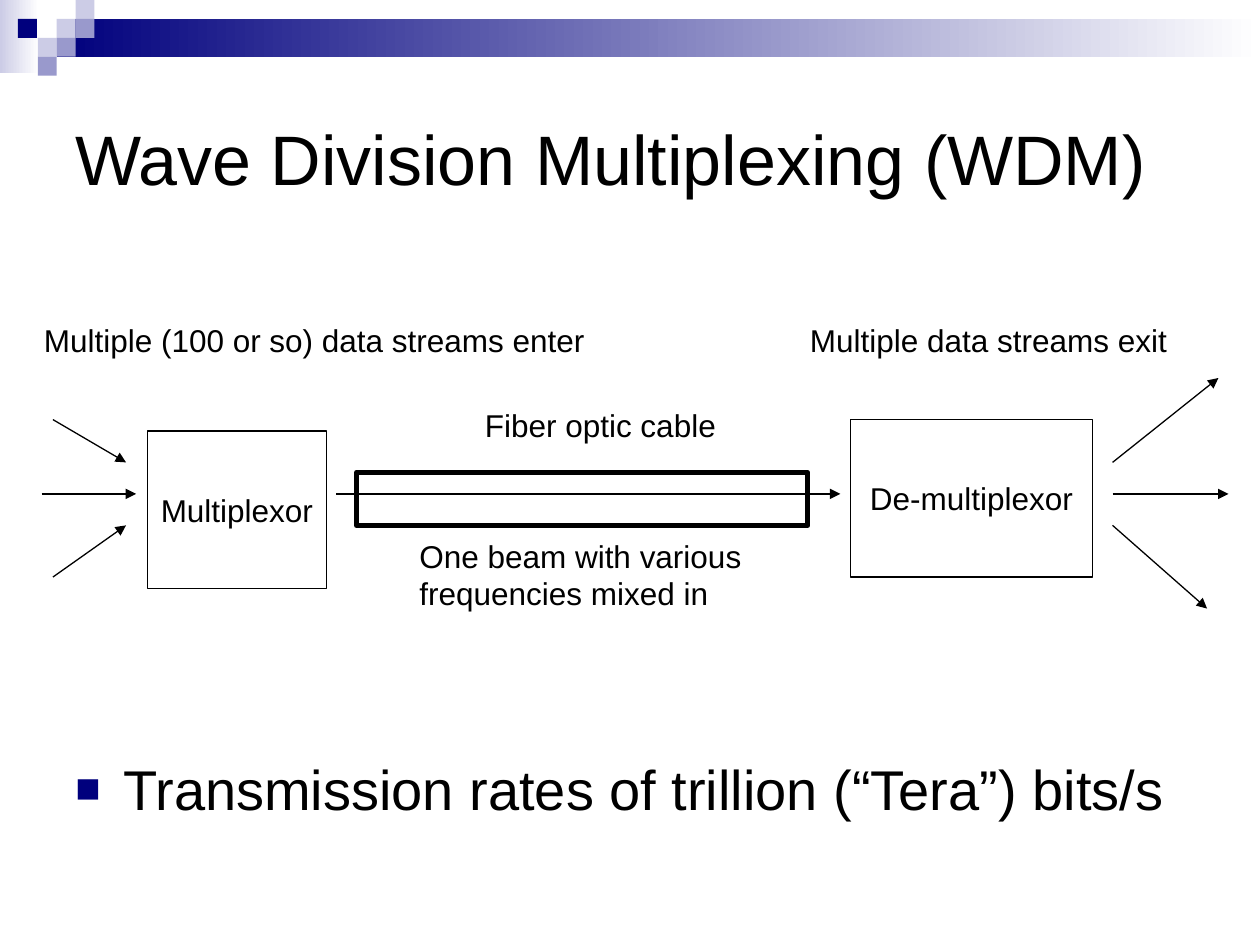
import pptx
import pptx.util
import pptx.dml.color
import pptx.enum.shapes
import pptx.enum.text
from dataclasses import dataclass
from lxml import etree

Inches = pptx.util.Inches
Shape = pptx.enum.shapes.MSO_SHAPE
Anchor = pptx.enum.text.MSO_ANCHOR
Align = pptx.enum.text.PP_ALIGN
Fit = pptx.enum.text.MSO_AUTO_SIZE


@dataclass(frozen=True)
class Theme:
    font: str = "Arial"
    ink: str = "000000"
    paper: str = "FFFFFF"
    navy: str = "00007D"
    mid: str = "9999CC"
    pale: str = "CCCCE6"
    title: int = 40
    body: int = 32
    label: int = 18
    thin: float = 0.75
    thick: float = 3


theme = Theme()


def color(code):
    return pptx.dml.color.RGBColor.from_string(code)


def add_child(node, tag, **attrs):
    return etree.SubElement(node, pptx.oxml.ns.qn(tag), attrs)


def add_rect(slide, left, top, width, height, fill=None, line=None):
    rect = slide.shapes.add_shape(
        Shape.RECTANGLE, Inches(left), Inches(top), Inches(width), Inches(height))
    rect.shadow.inherit = False
    if fill is None:
        rect.fill.background()
    elif isinstance(fill, tuple):
        rect.fill.gradient()
        rect.fill.gradient_angle = 0
        for stop, code, place in zip(rect.fill.gradient_stops, fill, (0, 1)):
            stop.color.rgb = color(code)
            stop.position = place
    else:
        rect.fill.solid()
        rect.fill.fore_color.rgb = color(fill)
    if line is None:
        rect.line.fill.background()
    else:
        rect.line.color.rgb = color(theme.ink)
        rect.line.width = pptx.util.Pt(line)
    return rect


def set_text(shape, text, size, wrap=True, anchor=Anchor.TOP, align=Align.LEFT):
    frame = shape.text_frame
    frame.text = text
    frame.word_wrap = wrap
    frame.vertical_anchor = anchor
    para = frame.paragraphs[0]
    para.alignment = align
    font = para.runs[0].font
    font.name = theme.font
    font.size = pptx.util.Pt(size)
    font.color.rgb = color(theme.ink)
    return frame


def add_text(slide, box, text, size, **style):
    shape = slide.shapes.add_textbox(*map(Inches, box))
    return set_text(shape, text, size, **style)


def add_label(slide, box, text, wrap=False):
    frame = add_text(slide, box, text, theme.label, wrap=wrap)
    frame.auto_size = Fit.SHAPE_TO_FIT_TEXT


def add_arrow(slide, start, end):
    arrow = slide.shapes.add_connector(
        pptx.enum.shapes.MSO_CONNECTOR.STRAIGHT, *map(Inches, start + end))
    arrow.line.color.rgb = color(theme.ink)
    arrow.line.width = pptx.util.Pt(theme.thin)
    add_child(arrow.line._get_or_add_ln(), "a:tailEnd", type="triangle")
    add_child(arrow._element.spPr, "a:effectLst")


def draw_banner(slide, box):
    left, top, width, height = box
    tile = height / 4
    add_rect(slide, left, top, 0.31, 0.58, (theme.pale, theme.paper))
    add_rect(slide, left + 3 * tile, top + tile, width - 3 * tile, 2 * tile,
             (theme.navy, theme.paper))
    tiles = [(3, 1, theme.pale), (4, 0, theme.pale), (4, 1, theme.mid),
             (2, 2, theme.pale), (0.95, 1, theme.navy), (3, 2, theme.mid),
             (2, 3, theme.mid)]
    for col, row, fill in tiles:
        add_rect(slide, left + col * tile, top + row * tile, tile, tile, fill)


def draw_title(slide, box):
    add_text(slide, box, "Wave Division Multiplexing (WDM)", theme.title,
             anchor=Anchor.MIDDLE)


def draw_body(slide, box):
    frame = add_text(slide, box, "Transmission rates of trillion (“Tera”) bits/s",
                     theme.body)
    frame.margin_top = Inches(3.82)
    props = frame.paragraphs[0]._p.get_or_add_pPr()
    props.set("marL", str(Inches(0.38)))
    props.set("indent", str(-Inches(0.38)))
    add_child(add_child(props, "a:buClr"), "a:srgbClr", val=theme.navy)
    add_child(props, "a:buSzPct", val="75000")
    add_child(props, "a:buFont", typeface=theme.font)
    add_child(props, "a:buChar", char="■")


def draw_flow(slide, box):
    left, top, width, height = box
    axis = top + 1.42

    add_rect(slide, left + 2.58, top + 1.25, 3.58, 0.42, line=theme.thick)
    nodes = [("Multiplexor", 0.92, 0.92, 1.42), ("De-multiplexor", 6.5, 0.83, 1.92)]
    for text, across, down, wide in nodes:
        node = add_rect(slide, left + across, top + down, wide, 1.25, line=theme.thin)
        set_text(node, text, theme.label, wrap=False, anchor=Anchor.MIDDLE,
                 align=Align.CENTER)

    arrows = [(0.17, -0.59, 0.75, -0.25), (0.08, 0, 0.83, 0), (0.17, 0.66, 0.75, 0.25),
              (8.58, -0.25, 9.42, -0.92), (8.58, 0, 9.5, 0), (8.58, 0.25, 9.33, 0.91),
              (2.42, 0, 6.42, 0)]
    for tail, rise, head, drop in arrows:
        add_arrow(slide, (left + tail, axis + rise), (left + head, axis + drop))

    add_label(slide, (left, top, 4.49, 0.4), "Multiple (100 or so) data streams enter")
    add_label(slide, (left + 6.08, top, 3.04, 0.4), "Multiple data streams exit")
    add_label(slide, (left + 3.5, top + 0.67, 2.04, 0.4), "Fiber optic cable")
    add_label(slide, (left + 2.98, top + 1.71, 2.93, 0.7),
              "One beam with various frequencies mixed in", wrap=True)


def main():
    deck = pptx.Presentation()
    deck.slide_width = Inches(10)
    deck.slide_height = Inches(7.5)
    slide = deck.slides.add_slide(deck.slide_layouts[6])
    draw_banner(slide, (0, 0, 10, 0.6))
    draw_body(slide, (0.5, 2.17, 9, 5))
    draw_title(slide, (0.5, 0.5, 9, 1.5))
    draw_flow(slide, (0.25, 2.5, 9.5, 2.41))
    deck.save("out.pptx")


if __name__ == "__main__":
    main()
